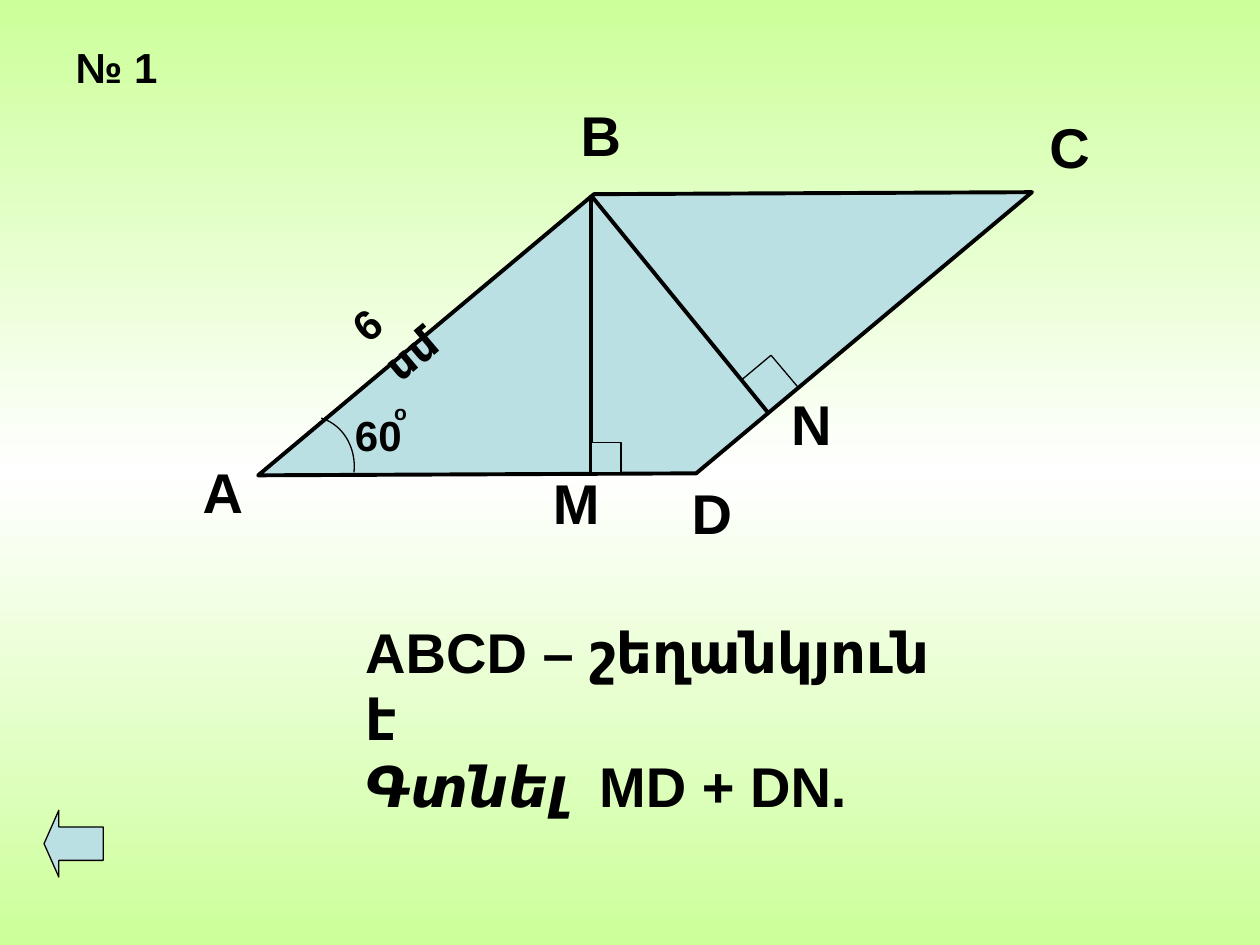
from copy import deepcopy

from lxml import etree
from pptx import Presentation
from pptx import util as u
from pptx.dml.color import RGBColor
from pptx.enum import shapes, text
from pptx.oxml.ns import qn

COLORS = {"green": "CCFF99", "white": "FFFFFF", "blue": "BBE0E3", "black": "000000"}
FONT = "Arial"

# Points of the figure
B, M, N = (337.7, 111.6), (337.7, 270), (439.2, 236.2)
RIGHT_ANGLE_N = [(423.4, 217.4), (440.6, 203), (455.8, 221)]
ANGLE_ARC = [(183.6, 239), (195.8, 242.6), (203.8, 255.6), (202.3, 270)]

# Vertex names with left, top and width of their boxes
VERTICES = [
    ("А", 108.7, 257.8, 37.4),
    ("В", 324.7, 54, 37.4),
    ("С", 592.6, 60.5, 37.4),
    ("D", 388.1, 270, 37.4),
    ("M", 308.9, 264.2, 41),
    ("N", 445, 218.9, 37.4),
]


def color(name):
    return RGBColor.from_string(COLORS[name])


def paint_background(slide):
    fill = slide.background.fill
    fill.gradient()
    fill.gradient_angle = 90
    for stop, name, position in zip(fill.gradient_stops, ("green", "white"), (0, 0.5)):
        stop.color.rgb = color(name)
        stop.position = position
    stops = slide.element.find(".//" + qn("a:gsLst"))
    stops.append(deepcopy(stops[0]))
    fill.gradient_stops[2].position = 1


def write(shape, *paragraphs, size=32, wrap=False, anchor=text.MSO_ANCHOR.TOP):
    """Each paragraph is a list of (words, italic) runs."""
    frame = shape.text_frame
    frame.word_wrap = wrap
    frame.auto_size = text.MSO_AUTO_SIZE.NONE
    frame.vertical_anchor = anchor
    for index, runs in enumerate(paragraphs):
        paragraph = frame.add_paragraph() if index else frame.paragraphs[0]
        paragraph.alignment = text.PP_ALIGN.LEFT
        for words, italic in runs:
            run = paragraph.add_run()
            run.text = words
            run.font.name = FONT
            run.font.size = u.Pt(size)
            run.font.bold = True
            run.font.italic = italic
            run.font.color.rgb = color("black")


def add_label(slide, words, left, top, width, height, rotation=0, **style):
    box = slide.shapes.add_textbox(u.Pt(left), u.Pt(top), u.Pt(width), u.Pt(height))
    box.rotation = rotation
    write(box, [(words, False)], **style)


def outline(shape, weight):
    shape.line.color.rgb = color("black")
    shape.line.width = u.Pt(weight)


def add_figure(slide, kind, left, top, width, height, weight=0.75, rotation=0):
    shape = slide.shapes.add_shape(kind, u.Pt(left), u.Pt(top), u.Pt(width), u.Pt(height))
    shape.shadow.inherit = False
    shape.fill.solid()
    shape.fill.fore_color.rgb = color("blue")
    shape.rotation = rotation
    outline(shape, weight)
    return shape


def add_line(slide, start, end, weight):
    line = slide.shapes.add_connector(
        shapes.MSO_CONNECTOR.STRAIGHT, *(u.Pt(value) for value in (*start, *end)))
    outline(line, weight)
    etree.SubElement(line.element.spPr, qn("a:effectLst"))


def add_arc(slide, controls, weight=0.75, steps=24):
    """Draw a cubic curve through its four control points."""
    points = []
    for step in range(steps + 1):
        t = step / steps
        weights = ((1 - t) ** 3, 3 * t * (1 - t) ** 2, 3 * t ** 2 * (1 - t), t ** 3)
        points.append(tuple(
            u.Pt(sum(share * point[axis] for share, point in zip(weights, controls)))
            for axis in (0, 1)))
    builder = slide.shapes.build_freeform(*points[0])
    builder.add_line_segments(points[1:], close=False)
    arc = builder.convert_to_shape()
    arc.shadow.inherit = False
    arc.fill.background()
    outline(arc, weight)


def main():
    presentation = Presentation()
    presentation.slide_width, presentation.slide_height = u.Pt(720), u.Pt(540)
    slide = presentation.slides.add_slide(presentation.slide_layouts[5])
    paint_background(slide)

    # Title
    title = slide.shapes.title
    title.left, title.top, title.width, title.height = map(u.Pt, (36, 21.6, 154, 33))
    write(title, [("№ 1", False)], size=24, wrap=True, anchor=text.MSO_ANCHOR.MIDDLE)

    # Back arrow
    kinds = shapes.MSO_SHAPE
    arrow = add_figure(slide, kinds.LEFT_ARROW, 25.2, 463, 33.8, 38.2)
    arrow.adjustments[0], arrow.adjustments[1] = 0.5, 0.25

    # Rhombus with its two heights
    add_figure(slide, kinds.DIAMOND, 133.2, 105.8, 470.9, 169.9, 2.25, 339.9)
    for foot in (M, N):
        add_line(slide, B, foot, 2.25)

    # Angle marks
    add_figure(slide, kinds.RECTANGLE, M[0], M[1] - 17.3, 17.3, 17.3)
    for start, end in zip(RIGHT_ANGLE_N, RIGHT_ANGLE_N[1:]):
        add_line(slide, start, end, 0.75)
    add_arc(slide, ANGLE_ARC)

    # Measures
    add_label(slide, "6 սմ", 191.5, 156.2, 62.6, 36, rotation=319.8, size=24, wrap=True)
    add_label(slide, "60", 195.8, 230.4, 41, 36, size=24)
    add_label(slide, "о", 218.2, 224.6, 21.6, 21.6, size=12)

    # Vertex names
    for name, left, top, width in VERTICES:
        add_label(slide, name, left, top, width, 45.4)

    # Problem statement
    problem = slide.shapes.add_textbox(u.Pt(201.6), u.Pt(349.2), u.Pt(346.3), u.Pt(85))
    write(problem, [("ABCD – շեղանկյուն է", False)],
          [("Գտնել  ", True), ("MD + DN.", False)], wrap=True)

    presentation.save("out.pptx")


if __name__ == "__main__":
    main()
